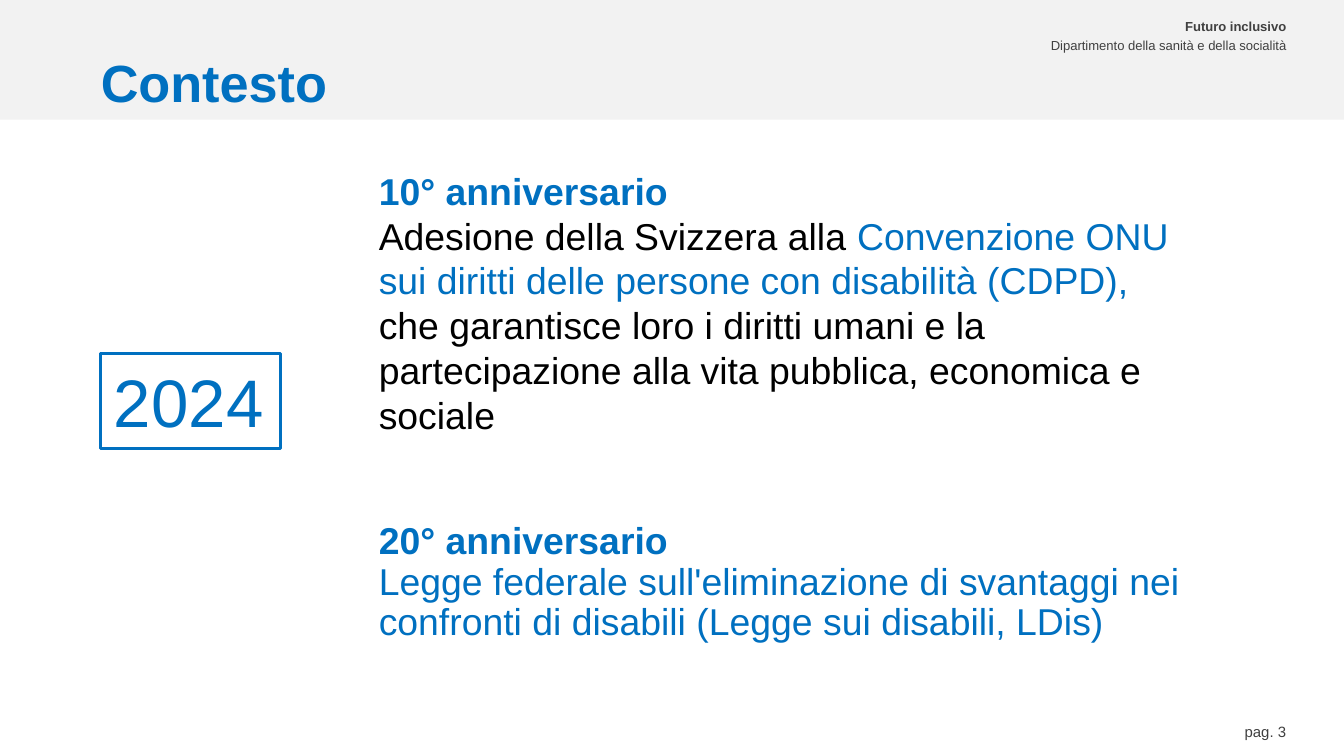
from pptx import Presentation
from pptx import util as u
from pptx.dml.color import RGBColor
from pptx.enum import shapes, text

C = {"blue": "0070C0", "black": "000000", "grey": "404040",
     "band": "F2F2F2", "white": "FFFFFF"}

# 16:9 slide
prs = Presentation()
prs.slide_width, prs.slide_height = u.Inches(10), u.Inches(10 * 9 / 16)
s = prs.slides.add_slide(prs.slide_layouts[6])


def add_box(x, y, w, h, fill, line=None):
    sp = s.shapes.add_shape(shapes.MSO_SHAPE.RECTANGLE, *map(u.Inches, (x, y, w, h)))
    sp.shadow.inherit = False
    sp.fill.solid()
    sp.fill.fore_color.rgb = RGBColor.from_string(C[fill])
    if line:
        sp.line.color.rgb = RGBColor.from_string(C[line])
        sp.line.width = u.Pt(1.5)
    else:
        sp.line.fill.background()
    return sp


def write(sp, runs, size, align=text.PP_ALIGN.LEFT, anchor=text.MSO_ANCHOR.TOP,
          spacing=1.0, insets=(0.1, 0.05)):
    """Fill one paragraph with (words, colour, bold) runs; a newline is a line break."""
    tf = sp.text_frame
    tf.word_wrap = True
    tf.vertical_anchor = anchor
    tf.margin_left = tf.margin_right = u.Inches(insets[0])
    tf.margin_top = tf.margin_bottom = u.Inches(insets[1])
    p = tf.paragraphs[0]
    p.alignment, p.line_spacing = align, spacing
    for words, color, bold in runs:
        for i, part in enumerate(words.split("\n")):
            if i:
                p.add_line_break()
            if part:
                r = p.add_run()
                r.text = part
                r.font.name, r.font.size, r.font.bold = "Arial", u.Pt(size), bold
                r.font.color.rgb = RGBColor.from_string(C[color])


# Header band
add_box(0, -0.02, 10, 0.91, "band")

# Department lines and page number, right-aligned
for x, y, w, h, words, size, bold in [
    (6.02, 0.09, 3.55, 0.22, "Futuro inclusivo", 7, True),
    (6.02, 0.23, 3.55, 0.22, "Dipartimento della sanità e della socialità", 7, False),
    (7.99, 5.33, 1.58, 0.24, "pag. 3", 8, False),
]:
    sp = s.shapes.add_textbox(*map(u.Inches, (x, y, w, h)))
    write(sp, [(words, "grey", bold)], size, text.PP_ALIGN.RIGHT, insets=(0, 0.05))

# Title
sp = s.shapes.add_textbox(*map(u.Inches, (0.75, 0.37, 8.98, 0.47)))
write(sp, [("Contesto", "blue", True)], 28, anchor=text.MSO_ANCHOR.BOTTOM, insets=(0, 0))

# 20th anniversary
sp = add_box(2.72, 3.84, 6.54, 1.02, "white", "white")
write(sp, [
    ("20° anniversario\n", "blue", True),
    ("Legge federale sull'eliminazione di svantaggi nei confronti di disabili "
     "(Legge sui disabili, LDis)", "blue", False),
], 20, spacing=0.9)

# Year
sp = add_box(0.75, 2.63, 1.34, 0.71, "white", "blue")
write(sp, [("2024", "blue", False)], 36)

# 10th anniversary
sp = add_box(2.72, 1.2, 6.54, 2.12, "white", "white")
write(sp, [
    ("10° anniversario \n", "blue", True),
    ("Adesione della Svizzera alla ", "black", False),
    ("Convenzione ONU \nsui diritti delle persone con disabilità (CDPD), \n", "blue", False),
    ("che garantisce loro i diritti umani e la partecipazione alla vita pubblica, "
     "economica e sociale", "black", False),
], 20)

prs.save("out.pptx")
